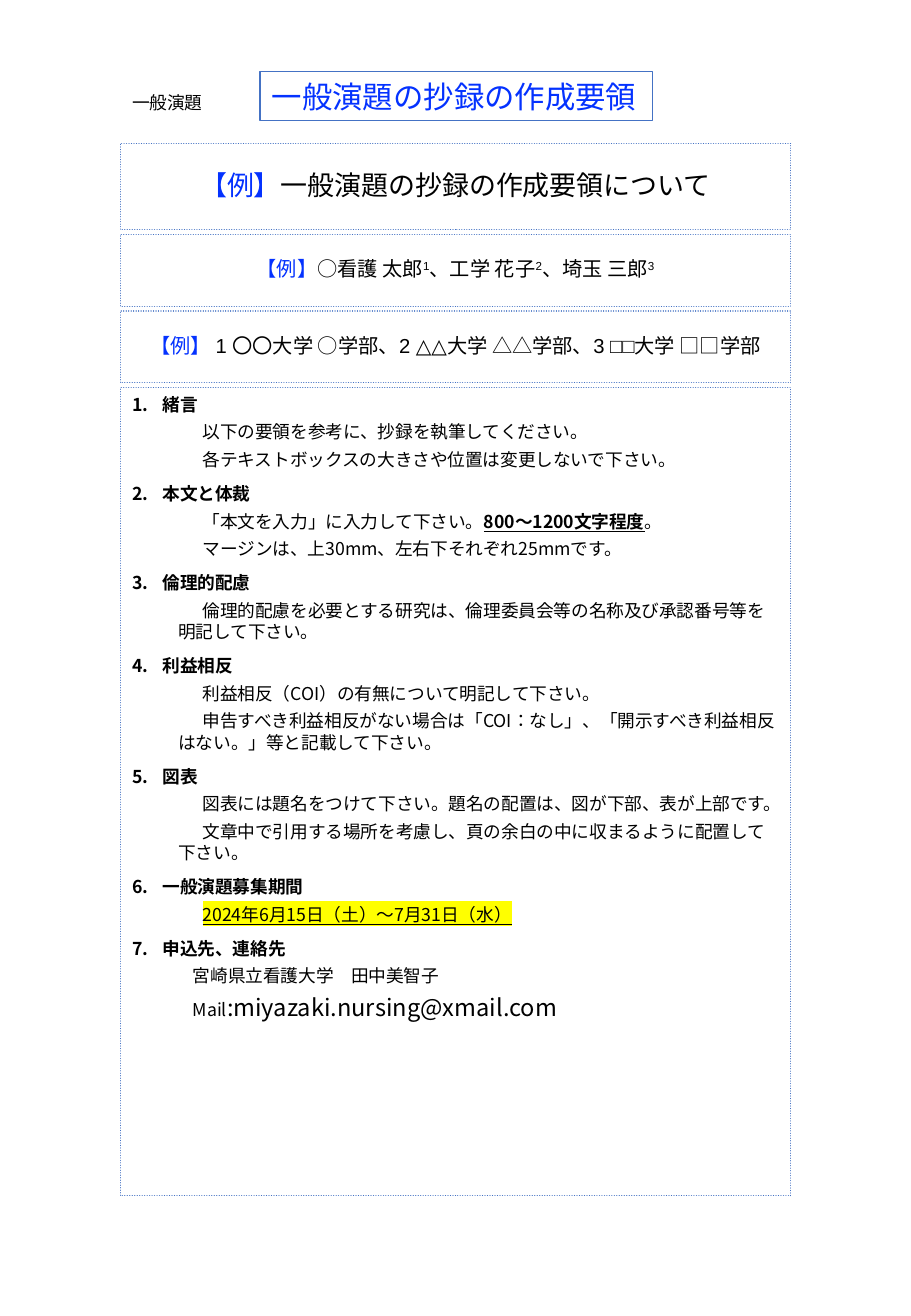
"""Build the one-page guide for writing abstracts."""
from lxml.etree import SubElement
from pptx import Presentation
from pptx.dml.color import RGBColor
from pptx.enum.dml import MSO_LINE
from pptx.enum.shapes import MSO_SHAPE
from pptx.enum.text import MSO_ANCHOR, MSO_AUTO_SIZE, PP_ALIGN
from pptx.oxml.ns import qn
from pptx.util import Inches, Pt

BLACK = RGBColor(0x00, 0x00, 0x00)
BLUE = RGBColor(0x04, 0x32, 0xFF)
EDGE = RGBColor(0x44, 0x72, 0xC4)
YELLOW = RGBColor(0xFF, 0xFF, 0x00)
NOTO = "Noto Sans CJK JP"
LEFT, WIDTH = 0.99, 5.52

PARTS = [
    ("緒言", [
        "以下の要領を参考に、抄録を執筆してください。",
        "各テキストボックスの大きさや位置は変更しないで下さい。"]),
    ("本文と体裁", [
        [("「本文を入力」に入力して下さい。", {}),
         ("800〜1200文字程度", {"bold": True, "line": True}),
         ("。", {})],
        "マージンは、上30mm、左右下それぞれ25mmです。"]),
    ("倫理的配慮", [
        "倫理的配慮を必要とする研究は、倫理委員会等の名称及び承認番号等を明記して下さい。"]),
    ("利益相反", [
        "利益相反（COI）の有無について明記して下さい。",
        "申告すべき利益相反がない場合は「COI：なし」、「開示すべき利益相反はない。」等と記載して下さい。"]),
    ("図表", [
        "図表には題名をつけて下さい。題名の配置は、図が下部、表が上部です。",
        "文章中で引用する場所を考慮し、頁の余白の中に収まるように配置して下さい。"]),
    ("一般演題募集期間", [
        [("2024年6月15日（土）〜7月31日（水）", {"line": True, "mark": YELLOW})]]),
    ("申込先、連絡先", [
        "宮崎県立看護大学　田中美智子",
        [("Mail", {}), (":miyazaki.nursing@xmail.com", {"size": 14})]]),
]


class Page:
    """Hold the slide and draw its frames and text."""

    def __init__(self, deck):
        self.slide = deck.slides.add_slide(deck.slide_layouts[6])

    def run(self, para, text, size=10.5, color=BLACK, face=NOTO,
            bold=False, line=False, mark=None, lift=0):
        """Add one run of text with its format."""
        run = para.add_run()
        run.text = text
        font = run.font
        font.size, font.bold, font.underline = Pt(size), bold, line
        font.color.rgb = color
        props = run._r.get_or_add_rPr()
        props.set("lang", "ja-JP")
        if mark:
            glow = SubElement(props, qn("a:highlight"))
            SubElement(glow, qn("a:srgbClr")).set("val", str(mark))
        font.name = face
        SubElement(props, qn("a:ea")).set("typeface", NOTO)
        if lift:
            props.set("baseline", str(lift * 1000))

    def label(self, left, top, width, height, text, **form):
        """Add a line of plain text that does not wrap."""
        box = self.slide.shapes.add_textbox(
            Inches(left), Inches(top), Inches(width), Inches(height))
        self.fit(box.text_frame)
        self.run(box.text_frame.paragraphs[0], text, **form)

    def fit(self, frame):
        """Let a box grow with its text."""
        frame.word_wrap = False
        frame.auto_size = MSO_AUTO_SIZE.SHAPE_TO_FIT_TEXT

    def frame(self, left, top, width, height, dots=True):
        """Add an outlined box and return its text frame."""
        box = self.slide.shapes.add_shape(
            MSO_SHAPE.RECTANGLE, Inches(left), Inches(top),
            Inches(width), Inches(height))
        box.shadow.inherit = False
        box.fill.background()
        box.line.color.rgb = EDGE
        box.line.width = Pt(0.75)
        if dots:
            box.line.dash_style = MSO_LINE.ROUND_DOT
            box._element.spPr.find(qn("a:ln")).set("cap", "rnd")
        frame = box.text_frame
        frame.word_wrap = True
        frame.vertical_anchor = MSO_ANCHOR.TOP
        frame.paragraphs[0].alignment = PP_ALIGN.LEFT
        return frame

    def banner(self, top, height, runs, **form):
        """Add a dotted box with one centred line."""
        frame = self.frame(LEFT, top, WIDTH, height)
        frame.vertical_anchor = MSO_ANCHOR.MIDDLE
        para = frame.paragraphs[0]
        para.alignment = PP_ALIGN.CENTER
        para.line_spacing = 0.9
        for text, extra in runs:
            self.run(para, text, **form, **extra)

    def item(self, para, level, margin, indent, runs, count=False):
        """Fill one paragraph of the guide."""
        para.alignment = PP_ALIGN.LEFT
        para.level = level
        props = para._p.get_or_add_pPr()
        props.set("marL", str(Inches(margin)))
        props.set("indent", str(Inches(indent)))
        if count:
            SubElement(props, qn("a:buFont")).set("typeface", "+mj-lt")
            SubElement(props, qn("a:buAutoNum")).set("type", "arabicPeriod")
        else:
            SubElement(props, qn("a:buNone"))
        for text, form in runs:
            self.run(para, text, **form)

    def guide(self, top, height, parts):
        """Add the numbered parts of the guide."""
        frame = self.frame(LEFT, top, WIDTH, height)
        for rank, (head, lines) in enumerate(parts):
            para = frame.add_paragraph() if rank else frame.paragraphs[0]
            if rank:
                para.space_before = Pt(7.5)
            self.item(para, 0, 0.25, -0.25, [(head, {"bold": True})], True)
            last = rank == len(parts) - 1
            place = (2, 0.5, 0) if last else (1, 0.38, 0.2)
            for line in lines:
                para = frame.add_paragraph()
                para.space_before = Pt(3.8)
                runs = [(line, {})] if isinstance(line, str) else line
                self.item(para, *place, runs)


def main():
    """Build and save the page."""
    deck = Presentation()
    deck.slide_width, deck.slide_height = Inches(7.5), Inches(10.83)
    page = Page(deck)
    blue, lift = {"color": BLUE}, {"lift": 30}
    page.label(0.99, 0.71, 0.82, 0.29, "一般演題", face="Calibri")
    page.guide(3.19, 6.65, PARTS)
    page.banner(1.18, 0.71, [
        ("【例】", blue), ("一般演題の抄録の作成要領について", {})], size=16)
    page.banner(1.93, 0.59, [
        ("【例】", blue), ("○看護 太郎", {}), ("1", lift),
        ("、工学 花子", {}), ("2", lift),
        ("、埼玉 三郎", {}), ("3", lift)], size=12, face="Arial")
    page.banner(2.56, 0.59, [
        ("【例】 ", blue),
        ("1 〇〇大学 ○学部、2 △△大学 △△学部、3 □□大学 □□学部", {})],
        size=12, face="Arial")
    title = page.frame(2.14, 0.59, 3.23, 0.4, dots=False)
    page.fit(title)
    page.run(title.paragraphs[0], "一般演題の抄録の作成要領",
             size=18, color=BLUE, face="Calibri")
    deck.save("out.pptx")


if __name__ == "__main__":
    main()
